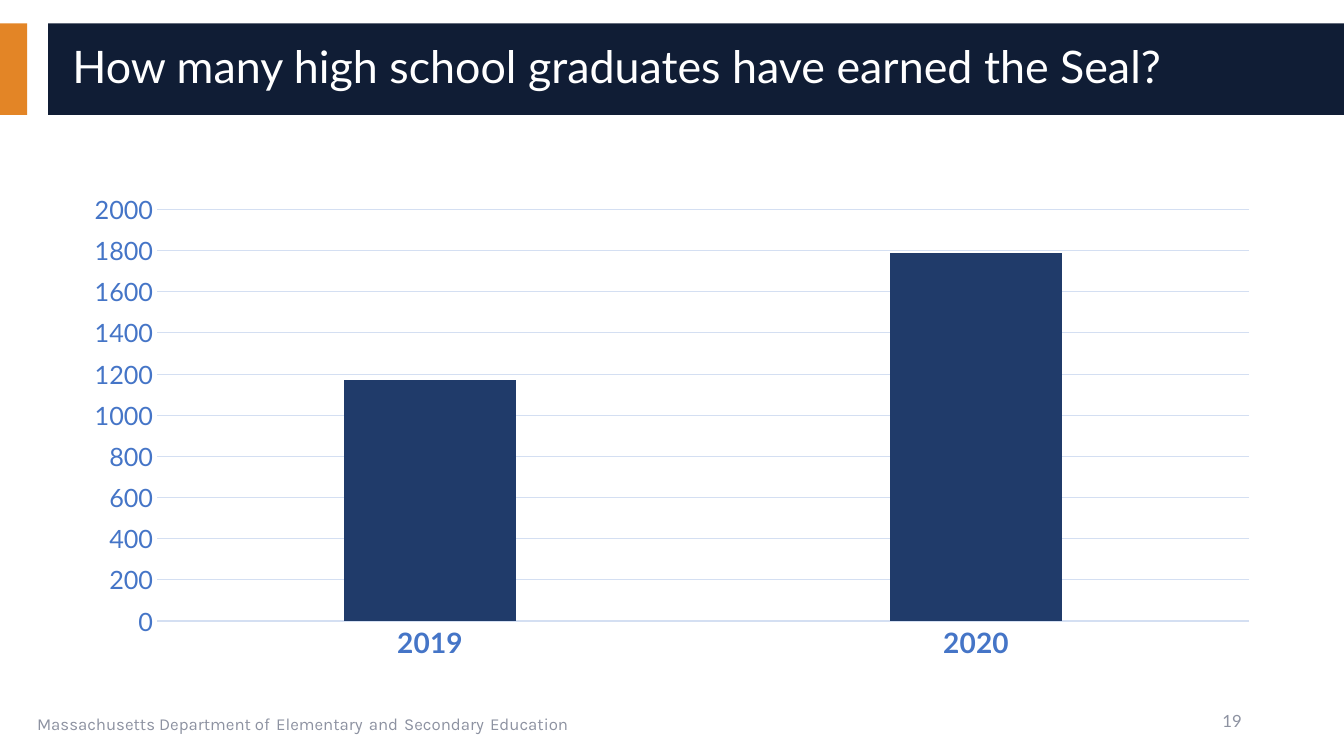
from pptx import Presentation
from pptx.chart.data import CategoryChartData
from pptx.dml.color import RGBColor
from pptx.enum.chart import XL_CHART_TYPE as ChartType, XL_TICK_MARK as TickMark
from pptx.enum.shapes import MSO_SHAPE as Preset
from pptx.enum.text import MSO_ANCHOR as Anchor, PP_ALIGN as Align
from pptx.util import Pt

TITLE = "How many high school graduates have earned the Seal?"
FOOTER = ["Massachusetts Department of", "Elementary", "and", "Secondary", "Education"]
PAGE = "19"
GRADUATES = {"2019": 1170, "2020": 1790}

ORANGE, NAVY, BLUE = "E38526", "101D35", "203B6A"
AXIS_BLUE, GRID, GREY, WHITE = "4575C7", "D4DFF2", "8D92A1", "FFFFFF"
WIDTH, HEIGHT = 960, 540
BAND_TOP, BAND_HEIGHT, BAND_LEFT = 16.6, 65.5, 34.3

TITLE_FONT = {"name": "Lato", "size": Pt(32)}
PAGE_FONT = {"name": "Lato", "size": Pt(12)}
WORD_FONT = {"name": "Karla", "size": Pt(12)}
SPACE_FONT = {"name": "Karla", "size": Pt(18)}
CHART_FONT = {"name": "Lato", "size": Pt(10)}
YEAR_FONT = {"name": "Lato", "size": Pt(20), "bold": True}
VALUE_FONT = {"name": "Lato", "size": Pt(18), "bold": False}
VALUE_SCALE = {"minimum_scale": 0, "maximum_scale": 2000, "major_unit": 200}


def paint(color_format, color):
    color_format.rgb = RGBColor.from_string(color)


def set_all(target, values):
    for name, value in values.items():
        setattr(target, name, value)


def style_font(font, values, color):
    set_all(font, values)
    paint(font.color, color)


def style_line(line, color):
    line.width = Pt(0.75)
    paint(line.color, color)


def add_band(slide, left, width, color):
    shape = slide.shapes.add_shape(
        Preset.RECTANGLE, Pt(left), Pt(BAND_TOP), Pt(width), Pt(BAND_HEIGHT))
    shape.shadow.inherit = False
    shape.fill.solid()
    paint(shape.fill.fore_color, color)
    shape.line.fill.background()


def add_text(slide, box, runs, anchor, paragraph_format):
    frame = slide.shapes.add_textbox(*map(Pt, box)).text_frame
    set_all(frame, {"word_wrap": True, "vertical_anchor": anchor})
    paragraph = frame.paragraphs[0]
    set_all(paragraph, paragraph_format)
    for text, font, color in runs:
        run = paragraph.add_run()
        run.text = text
        style_font(run.font, font, color)


def add_graduates_chart(slide, box):
    data = CategoryChartData()
    data.categories = list(GRADUATES)
    data.add_series("Series 1", list(GRADUATES.values()))
    chart = slide.shapes.add_chart(
        ChartType.COLUMN_CLUSTERED, *map(Pt, box), data).chart
    set_all(chart, {"has_legend": False, "has_title": False})
    style_font(chart.font, CHART_FONT, BLUE)

    plot = chart.plots[0]
    set_all(plot, {"gap_width": 219, "overlap": -27, "vary_by_categories": False})
    fill = plot.series[0].format.fill
    fill.solid()
    paint(fill.fore_color, BLUE)

    years, values = chart.category_axis, chart.value_axis
    for axis, font in ((years, YEAR_FONT), (values, VALUE_FONT)):
        set_all(axis, {"major_tick_mark": TickMark.NONE, "minor_tick_mark": TickMark.NONE})
        style_font(axis.tick_labels.font, font, AXIS_BLUE)
    style_line(years.format.line, GRID)
    set_all(values, VALUE_SCALE)
    values.format.line.fill.background()
    style_line(values.major_gridlines.format.line, GRID)


def main():
    presentation = Presentation()
    set_all(presentation, {"slide_width": Pt(WIDTH), "slide_height": Pt(HEIGHT)})
    slide = presentation.slides.add_slide(presentation.slide_layouts[6])

    add_band(slide, 0, 19.4, ORANGE)
    add_band(slide, BAND_LEFT, WIDTH - BAND_LEFT, NAVY)

    footer_runs = [(FOOTER[0], WORD_FONT, GREY)]
    for word in FOOTER[1:]:
        footer_runs += [(" ", SPACE_FONT, BLUE), (word, WORD_FONT, GREY)]
    add_text(slide, (19.4, 500.4, 607.7, 28.8), footer_runs, Anchor.TOP, {})
    add_text(slide, (44.6, 23, 895.7, 53.3), [(TITLE, TITLE_FONT, WHITE)],
             Anchor.MIDDLE, {"line_spacing": 0.9})
    add_text(slide, (678.2, 500.4, 216, 28.8), [(PAGE, PAGE_FONT, GREY)],
             Anchor.MIDDLE, {"alignment": Align.RIGHT, "space_after": Pt(6)})
    add_graduates_chart(slide, (50.4, 131.8, 859, 346.3))

    presentation.save("out.pptx")


if __name__ == "__main__":
    main()
